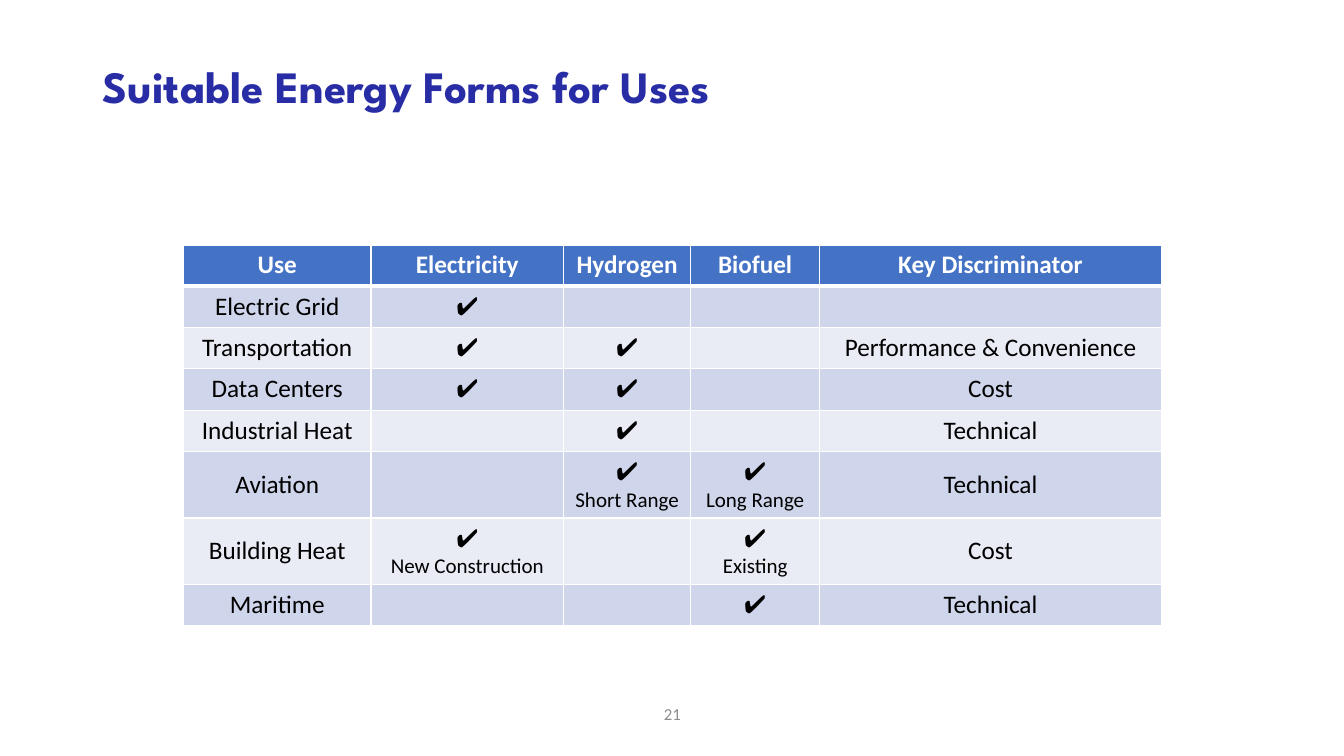
from lxml import etree
from pptx import Presentation
from pptx.dml.color import RGBColor
from pptx.enum.text import MSO_ANCHOR, MSO_AUTO_SIZE, PP_ALIGN
from pptx.oxml.ns import qn
from pptx.util import Inches, Pt

LEFT, CENTER = PP_ALIGN.LEFT, PP_ALIGN.CENTER
TOP, MIDDLE = MSO_ANCHOR.TOP, MSO_ANCHOR.MIDDLE
NO_AUTO_SIZE = MSO_AUTO_SIZE.NONE

WHITE = RGBColor(0xFF, 0xFF, 0xFF)
BLACK = RGBColor(0x00, 0x00, 0x00)
GRAY = RGBColor(0x8C, 0x8C, 0x8C)
TITLE_BLUE = RGBColor(0x28, 0x2D, 0xA5)
HEADER_BLUE = RGBColor(0x44, 0x72, 0xC4)
BANDS = [RGBColor(0xCF, 0xD5, 0xEA), RGBColor(0xE9, 0xEB, 0xF5)]

TITLE = "Suitable Energy Forms for Uses"
PAGE_NUMBER = "21"
CHECK = "✔︎"
HEADERS = ["Use", "Electricity", "Hydrogen", "Biofuel", "Key Discriminator"]
USES = [
    ["Electric Grid", CHECK, "", "", ""],
    ["Transportation", CHECK, CHECK, "", "Performance & Convenience"],
    ["Data Centers", CHECK, CHECK, "", "Cost"],
    ["Industrial Heat", "", CHECK, "", "Technical"],
    ["Aviation", "", CHECK + "\nShort Range", CHECK + "\nLong Range", "Technical"],
    ["Building Heat", CHECK + "\nNew Construction", "", CHECK + "\nExisting", "Cost"],
    ["Maritime", "", "", CHECK, "Technical"],
]
COLUMN_WIDTHS = [1.86, 1.91, 1.26, 1.28, 3.39]
ROW_HEIGHT, NOTE_ROW_HEIGHT = 0.41, 0.66


def write_text(frame, text, size=18, note_size=15, font="Calibri", color=BLACK,
               bold=False, align=CENTER, anchor=MIDDLE, line_spacing=None):
    frame.word_wrap = True
    frame.vertical_anchor = anchor
    for index, line in enumerate(text.split("\n")):
        paragraph = frame.paragraphs[0] if index == 0 else frame.add_paragraph()
        paragraph.alignment = align
        paragraph.line_spacing = line_spacing
        paragraph.font.size = Pt(size)
        if line:
            run = paragraph.add_run()
            run.text = line
            run.font.size = Pt(note_size if index else size)
            run.font.name = font
            run.font.bold = bold
            run.font.color.rgb = color


def set_borders(cell, bottom_width):
    properties = cell._tc.get_or_add_tcPr()
    for side, width in (("L", 1), ("R", 1), ("T", 1), ("B", bottom_width)):
        line = etree.SubElement(properties, qn(f"a:ln{side}"), w=str(Pt(width)))
        fill = etree.SubElement(line, qn("a:solidFill"))
        etree.SubElement(fill, qn("a:srgbClr"), val=str(WHITE))


def add_uses_table(slide):
    rows = [HEADERS] + USES
    heights = [NOTE_ROW_HEIGHT if any("\n" in text for text in row) else ROW_HEIGHT
               for row in rows]
    table = slide.shapes.add_table(
        len(rows), len(HEADERS), Inches(1.82), Inches(2.43),
        Inches(sum(COLUMN_WIDTHS)), Inches(sum(heights))).table
    for column, width in zip(table.columns, COLUMN_WIDTHS):
        column.width = Inches(width)
    for row_index, row in enumerate(rows):
        is_header = row_index == 0
        table.rows[row_index].height = Inches(heights[row_index])
        has_note = heights[row_index] == NOTE_ROW_HEIGHT
        for column_index, text in enumerate(row):
            cell = table.cell(row_index, column_index)
            set_borders(cell, 3 if is_header else 1)
            cell.fill.solid()
            cell.fill.fore_color.rgb = HEADER_BLUE if is_header else BANDS[(row_index - 1) % 2]
            cell.vertical_anchor = MIDDLE if has_note else TOP
            write_text(cell.text_frame, text, bold=is_header,
                       color=WHITE if is_header else BLACK, anchor=None)


def main():
    presentation = Presentation()
    presentation.slide_width = Inches(13.33)
    presentation.slide_height = Inches(7.5)
    slide = presentation.slides.add_slide(presentation.slide_layouts[5])

    title = slide.shapes.title
    title.left, title.top = Inches(0.92), Inches(0.4)
    title.width, title.height = Inches(11.5), Inches(0.97)
    title.text_frame.auto_size = NO_AUTO_SIZE
    write_text(title.text_frame, TITLE, size=32, font="League Spartan",
               color=TITLE_BLUE, bold=True, align=LEFT, line_spacing=0.9)

    page_box = slide.shapes.add_textbox(Inches(5.17), Inches(6.88), Inches(3), Inches(0.4))
    write_text(page_box.text_frame, PAGE_NUMBER, size=12, color=GRAY)

    add_uses_table(slide)
    presentation.save("out.pptx")


if __name__ == "__main__":
    main()
